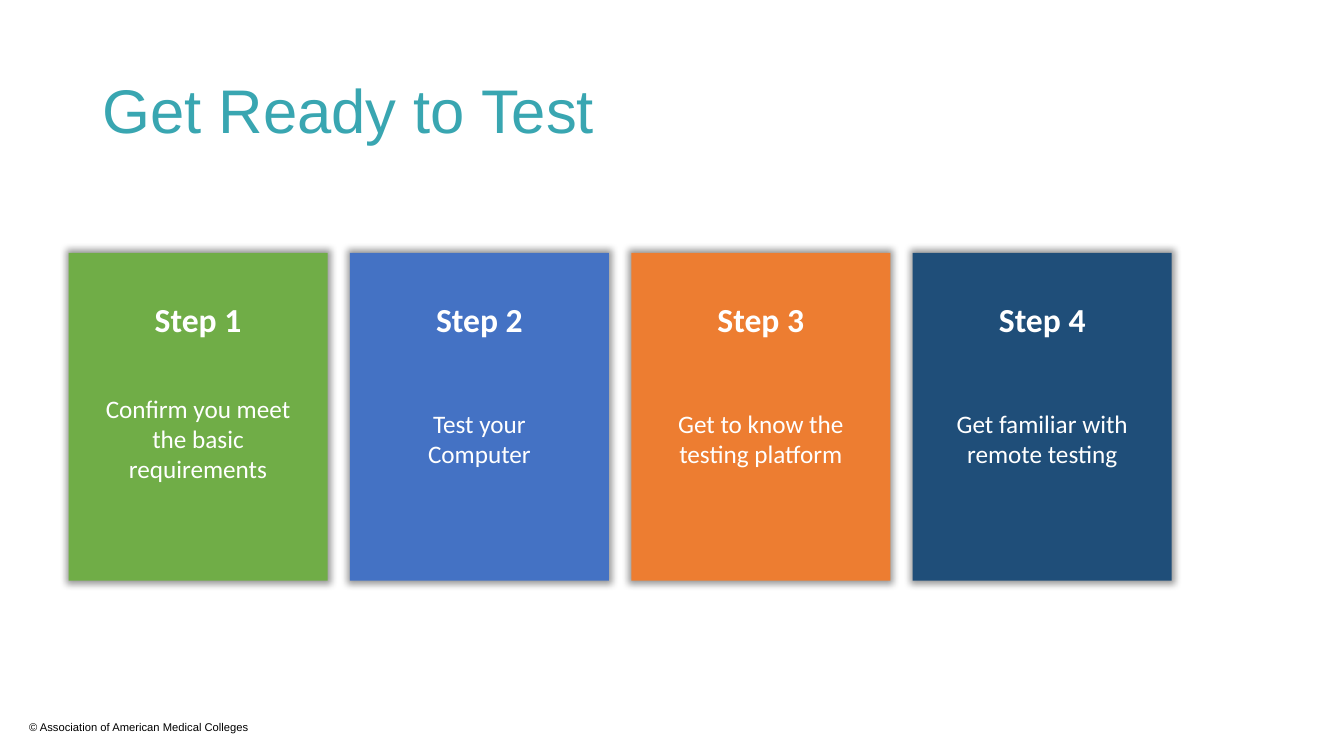
from pptx import Presentation
from pptx.dml.color import RGBColor
from pptx.enum.shapes import MSO_SHAPE
from pptx.enum.text import MSO_ANCHOR, MSO_AUTO_SIZE, PP_ALIGN
from pptx.oxml import parse_xml
from pptx.oxml.ns import qn
from pptx.util import Pt

RECTANGLE = MSO_SHAPE.RECTANGLE
MIDDLE, TOP = MSO_ANCHOR.MIDDLE, MSO_ANCHOR.TOP
LEFT, CENTER = PP_ALIGN.LEFT, PP_ALIGN.CENTER
NO_AUTOFIT = MSO_AUTO_SIZE.NONE
TITLE_ONLY_LAYOUT = 5

COLORS = {
    "title": "39A6B1",
    "footer": "000000",
    "card_text": "FFFFFF",
    "green": "70AD47",
    "blue": "4472C4",
    "orange": "ED7D31",
    "navy": "1F4E79",
}

STEPS = [
    ("green", "Confirm you meet the basic requirements"),
    ("blue", "Test your Computer"),
    ("orange", "Get to know the testing platform"),
    ("navy", "Get familiar with remote testing"),
]

CARD_LEFT, CARD_TOP, CARD_WIDTH, CARD_HEIGHT = 49, 180.7, 185, 234
CARD_PITCH = 201
LABEL_INSET, LABEL_HEIGHT = 18, 72
HEADING_TOP, BODY_TOP = 192, 277.2

SOFT_SHADOW = (
    '<a:effectLst xmlns:a="http://schemas.openxmlformats.org/drawingml/2006/main">'
    '<a:outerShdw blurRad="63500" sx="102000" sy="102000" algn="ctr" rotWithShape="0">'
    '<a:srgbClr val="000000"><a:alpha val="40000"/></a:srgbClr>'
    "</a:outerShdw></a:effectLst>"
)


class SlideBuilder:
    heading_font = "Arial"
    card_font = "Calibri"

    def __init__(self, presentation):
        layout = presentation.slide_layouts[TITLE_ONLY_LAYOUT]
        self.slide = presentation.slides.add_slide(layout)

    def set_text(self, shape, text, size, color, font, bold=False, align=LEFT, anchor=MIDDLE):
        text_frame = shape.text_frame
        text_frame.text = text
        text_frame.word_wrap = True
        text_frame.auto_size = NO_AUTOFIT
        text_frame.vertical_anchor = anchor
        paragraph = text_frame.paragraphs[0]
        paragraph.alignment = align
        run_font = paragraph.runs[0].font
        run_font.name, run_font.size, run_font.bold = font, Pt(size), bold
        run_font.color.rgb = RGBColor.from_string(COLORS[color])
        return paragraph

    def title(self, text, left, top, width, height):
        shape = self.slide.shapes.title
        shape.left, shape.top = Pt(left), Pt(top)
        shape.width, shape.height = Pt(width), Pt(height)
        paragraph = self.set_text(shape, text, 44, "title", self.heading_font)
        paragraph.line_spacing = 0.9

    def label(self, shapes, text, left, top, width, height, **style):
        box = shapes.add_textbox(Pt(left), Pt(top), Pt(width), Pt(height))
        self.set_text(box, text, **style)

    def footer(self, text, left, top, width, height):
        self.label(self.slide.shapes, text, left, top, width, height,
                   size=8, color="footer", font=self.heading_font, anchor=TOP)

    def card(self, left, color, heading, body):
        shapes = self.slide.shapes.add_group_shape().shapes
        panel = shapes.add_shape(RECTANGLE, Pt(left), Pt(CARD_TOP),
                                 Pt(CARD_WIDTH), Pt(CARD_HEIGHT))
        panel.fill.solid()
        panel.fill.fore_color.rgb = RGBColor.from_string(COLORS[color])
        panel.line.fill.background()
        # Soft shadow on all sides
        panel.shadow.inherit = False
        properties = panel.element.spPr
        properties.replace(properties.find(qn("a:effectLst")), parse_xml(SOFT_SHADOW))
        # Description and heading
        for text, top, size, bold in ((body, BODY_TOP, 18, False),
                                      (heading, HEADING_TOP, 24, True)):
            self.label(shapes, text, left + LABEL_INSET, top,
                       CARD_WIDTH - 2 * LABEL_INSET, LABEL_HEIGHT, size=size, bold=bold,
                       color="card_text", font=self.card_font, align=CENTER)


def main():
    presentation = Presentation()
    presentation.slide_width, presentation.slide_height = Pt(960), Pt(540)
    builder = SlideBuilder(presentation)

    # Title and footer
    builder.footer("© Association of American Medical Colleges", 13.7, 511.2, 387, 17)
    builder.title("Get Ready to Test", 66, 28.8, 828, 104.4)

    # Step cards
    for index, (color, body) in enumerate(STEPS):
        builder.card(CARD_LEFT + index * CARD_PITCH, color, f"Step {index + 1}", body)

    presentation.save("out.pptx")


if __name__ == "__main__":
    main()
